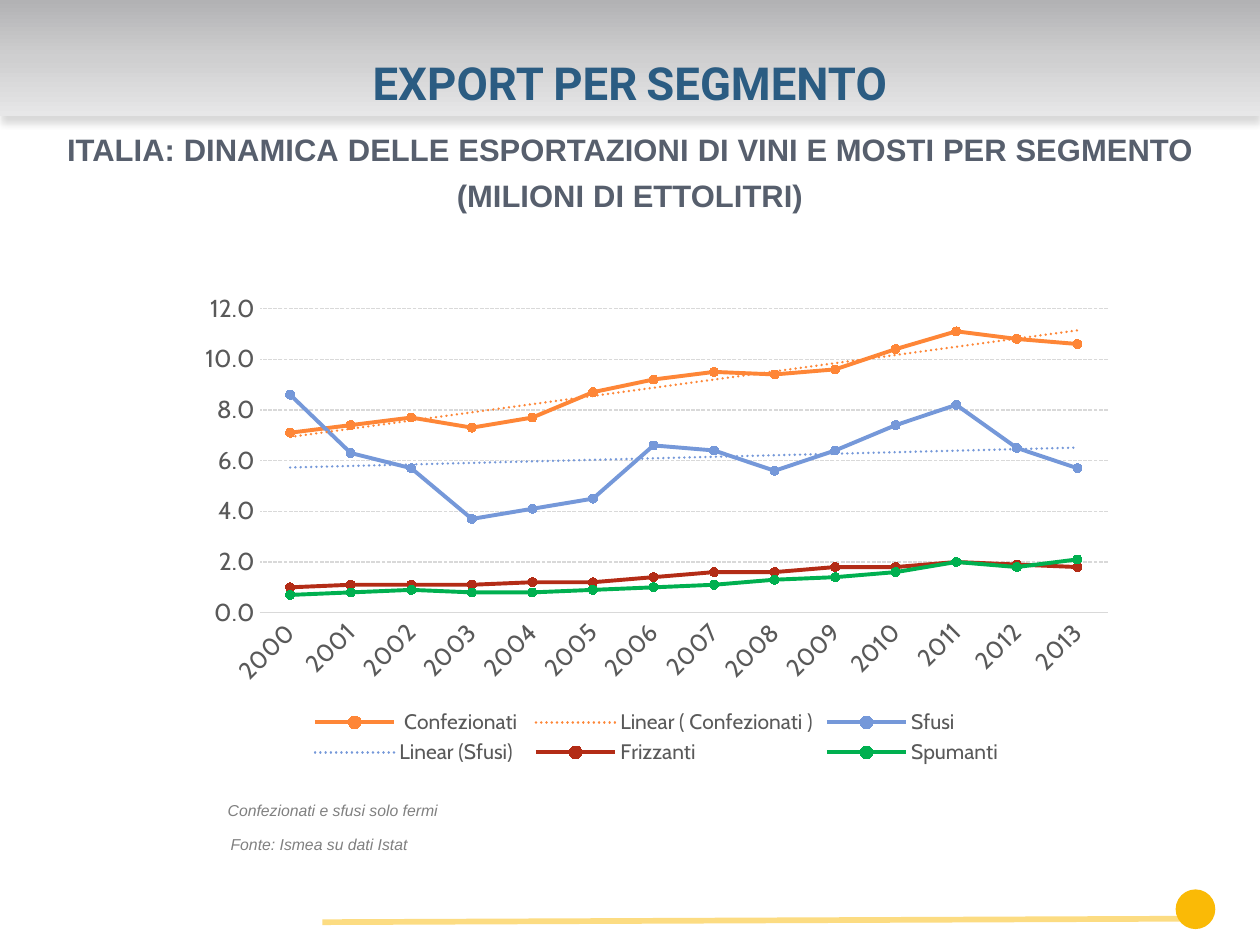
from copy import deepcopy

from lxml import etree
from pptx import Presentation
from pptx import util as u
from pptx.chart.data import CategoryChartData
from pptx.dml.color import RGBColor
from pptx.enum import chart as ch, dml, shapes, text
from pptx.oxml import parse_xml
from pptx.oxml.ns import nsdecls, qn

GREY, RULE, YELLOW = "595959", "D9D9D9", "FABA06"
YEARS = [str(y) for y in range(2000, 2014)]
# name, colour, has trend line, values
SERIES = [
    (" Confezionati ", "FE8637", True,
     [7.1, 7.4, 7.7, 7.3, 7.7, 8.7, 9.2, 9.5, 9.4, 9.6, 10.4, 11.1, 10.8, 10.6]),
    ("Sfusi", "7598D9", True,
     [8.6, 6.3, 5.7, 3.7, 4.1, 4.5, 6.6, 6.4, 5.6, 6.4, 7.4, 8.2, 6.5, 5.7]),
    ("Frizzanti", "B32C16", False,
     [1, 1.1, 1.1, 1.1, 1.2, 1.2, 1.4, 1.6, 1.6, 1.8, 1.8, 2, 1.9, 1.8]),
    ("Spumanti", "00B050", False,
     [0.7, 0.8, 0.9, 0.8, 0.8, 0.9, 1, 1.1, 1.3, 1.4, 1.6, 2, 1.8, 2.1]),
]


def rgb(value):
    return RGBColor.from_string(value)


def set_attrs(obj, **values):
    for name, value in values.items():
        setattr(obj, name, value)


def set_font(font, color, **values):
    set_attrs(font, **values)
    font.color.rgb = rgb(color)


def place(sp, x, y, w, h):
    set_attrs(sp, left=u.Cm(x), top=u.Cm(y), width=u.Cm(w), height=u.Cm(h))


def fill_heading(sp, words, box, anchor, color, **font):
    """Centred bold small-caps text in a placeholder."""
    place(sp, *box)
    tf = sp.text_frame
    set_attrs(tf, word_wrap=True, auto_size=text.MSO_AUTO_SIZE.NONE,
              vertical_anchor=anchor)
    p = tf.paragraphs[0]
    set_attrs(p, alignment=text.PP_ALIGN.CENTER, space_before=u.Pt(0))
    r = p.add_run()
    r.text = words
    set_font(r.font, color, bold=True, **font)
    r.font._element.set("cap", "small")


def shade_band(sp):
    """Grey vertical gradient with a soft shadow below."""
    sp.fill.gradient()
    sp.fill.gradient_angle = 270
    stops = sp._element.spPr.find(".//" + qn("a:gsLst"))
    stops.insert(1, deepcopy(stops[0]))
    for stop, pos, color in zip(sp.fill.gradient_stops, (0, 0.5, 1),
                                ("B2B2B4", "CFCFD0", "E7E7E8")):
        stop.position = pos
        stop.color.rgb = rgb(color)
    sp._element.spPr.append(parse_xml(
        f'<a:effectLst {nsdecls("a")}><a:outerShdw blurRad="50800" dist="50800" '
        f'dir="5400000" rotWithShape="0"><a:srgbClr val="{RULE}"/>'
        '</a:outerShdw></a:effectLst>'))


def add_footer_mark(s):
    sp = s.shapes.add_shape(shapes.MSO_SHAPE.OVAL, u.Cm(23.7), u.Cm(17.93),
                            u.Cm(0.8), u.Cm(0.8))
    sp.shadow.inherit = False
    sp.fill.solid()
    sp.fill.fore_color.rgb = rgb(YELLOW)
    sp.line.fill.background()

    line = s.shapes.add_connector(shapes.MSO_CONNECTOR.STRAIGHT, u.Cm(6.5),
                                  u.Cm(18.59), u.Cm(23.9), u.Cm(18.52))
    line.line.width = u.Pt(3.25)
    line.line.color.rgb = rgb(YELLOW)
    spPr = line._element.spPr
    clr = spPr.find(".//" + qn("a:srgbClr"))
    etree.SubElement(clr, qn("a:alpha")).set("val", "49000")
    etree.SubElement(spPr, qn("a:effectLst"))


def add_note(s, words, x, y, w):
    sp = s.shapes.add_textbox(u.Cm(x), u.Cm(y), u.Cm(w), u.Cm(0.64))
    tf = sp.text_frame
    set_attrs(tf, word_wrap=False, auto_size=text.MSO_AUTO_SIZE.SHAPE_TO_FIT_TEXT)
    r = tf.paragraphs[0].add_run()
    r.text = words
    set_font(r.font, "808080", name="Arial", size=u.Pt(9), italic=True)


def add_trend(ser, color):
    trend = parse_xml(
        f'<c:trendline {nsdecls("c", "a")}><c:spPr><a:ln w="19050" cap="rnd">'
        f'<a:solidFill><a:srgbClr val="{color}"/></a:solidFill>'
        '<a:prstDash val="sysDot"/></a:ln></c:spPr><c:trendlineType val="linear"/>'
        '<c:dispRSqr val="0"/><c:dispEq val="0"/></c:trendline>')
    ser._element.find(qn("c:cat")).addprevious(trend)


def style_series(ser, color, has_trend):
    ser.smooth = False
    ser.format.line.width = u.Pt(2.25)
    ser.format.line.color.rgb = rgb(color)
    set_attrs(ser.marker, style=ch.XL_MARKER_STYLE.CIRCLE, size=5)
    mark = ser.marker.format
    mark.fill.solid()
    mark.fill.fore_color.rgb = rgb(color)
    mark.line.color.rgb = rgb(color)
    if has_trend:
        add_trend(ser, color)


def style_axes(chart):
    cat, val = chart.category_axis, chart.value_axis
    for axis in (cat, val):
        set_attrs(axis, major_tick_mark=ch.XL_TICK_MARK.NONE,
                  minor_tick_mark=ch.XL_TICK_MARK.NONE)
        set_font(axis.tick_labels.font, GREY, name="Cabin", size=u.Pt(14))
    # Slanted years
    cat._element.find(qn("c:txPr")).find(qn("a:bodyPr")).set("rot", "-2700000")
    set_attrs(val, minimum_scale=0, maximum_scale=12, major_unit=2,
              has_major_gridlines=True)
    set_attrs(val.tick_labels, number_format="0.0", number_format_is_linked=False)
    val.format.line.fill.background()
    grid = val.major_gridlines.format.line
    for line in (cat.format.line, grid):
        line.width = u.Pt(0.75)
        line.color.rgb = rgb(RULE)
    grid.dash_style = dml.MSO_LINE.SQUARE_DOT


def add_export_chart(s):
    data = CategoryChartData(number_format="0.0")
    data.categories = YEARS
    for name, _, _, values in SERIES:
        data.add_series(name, values)
    chart = s.shapes.add_chart(ch.XL_CHART_TYPE.LINE_MARKERS, u.Cm(3.76), u.Cm(5.72),
                               u.Cm(18.95), u.Cm(9.8), data).chart
    set_font(chart.font, "000000", name="Cabin", size=u.Pt(10))
    set_attrs(chart, has_title=False, has_legend=True)
    chart.plots[0].vary_by_categories = False
    set_attrs(chart.legend, position=ch.XL_LEGEND_POSITION.BOTTOM,
              include_in_layout=False)
    set_font(chart.legend.font, GREY, name="Cabin", size=u.Pt(12))
    style_axes(chart)
    for ser, (_, color, has_trend, _) in zip(chart.plots[0].series, SERIES):
        style_series(ser, color, has_trend)


def main():
    prs = Presentation()
    set_attrs(prs, slide_width=u.Cm(25.4), slide_height=u.Cm(19.05))
    s = prs.slides.add_slide(prs.slide_layouts[0])

    # Headings
    title, subtitle = s.placeholders
    fill_heading(title, "EXPORT PER SEGMENTO", (0, 0, 25.4, 2.34),
                 text.MSO_ANCHOR.BOTTOM, "2B5C82", name="Roboto", size=u.Pt(26))
    shade_band(title)
    fill_heading(subtitle, "italia: dinamica delle esportazioni di vini e mosti "
                 "per segmento (milioni di ettolitri)", (0, 2.34, 25.4, 2),
                 text.MSO_ANCHOR.TOP, "575F6D", name="Arial", size=u.Pt(22.2))

    # Chart, notes and footer
    add_footer_mark(s)
    add_export_chart(s)
    add_note(s, "Fonte: Ismea su dati Istat", 4.4, 16.71, 4.11)
    add_note(s, "Confezionati e sfusi solo fermi", 4.34, 16.02, 4.78)
    prs.save("out.pptx")


if __name__ == "__main__":
    main()
